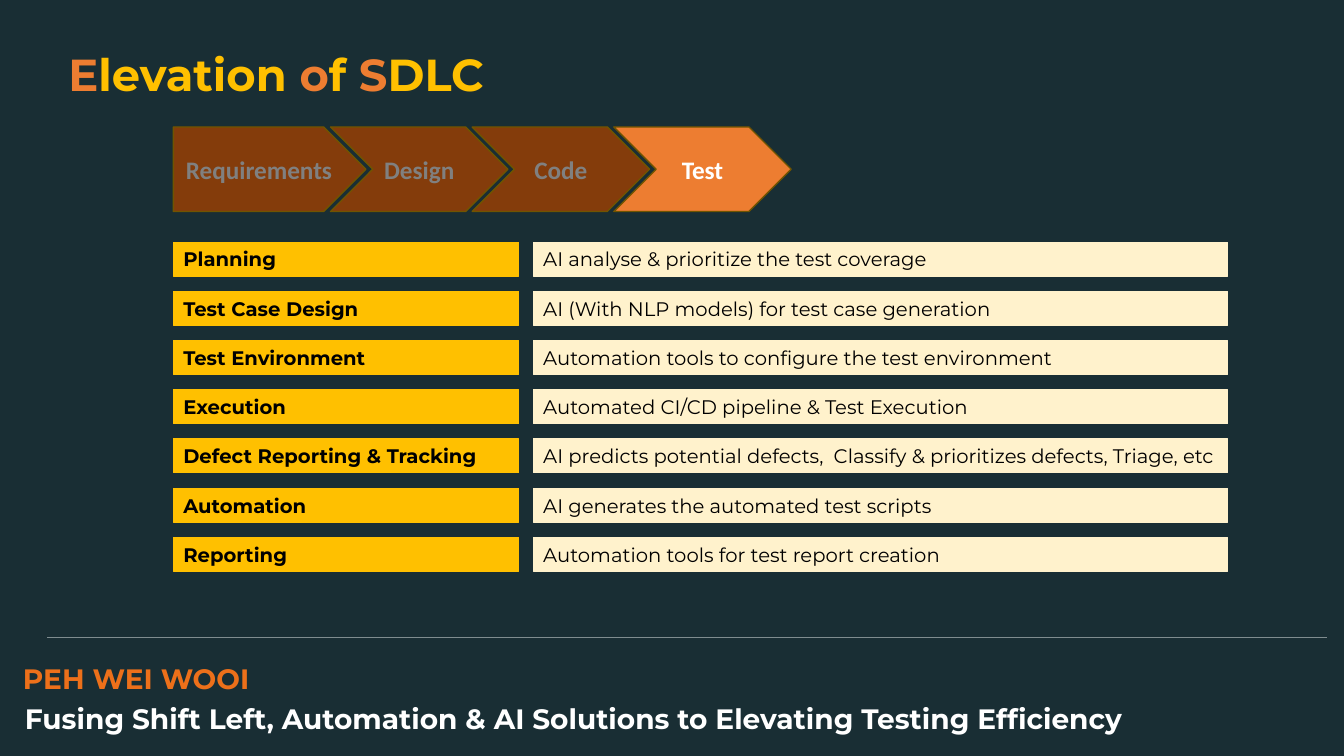
"""Builds a slide on how AI lifts the test stage of the SDLC."""
from pptx import Presentation
from pptx.dml.color import RGBColor
from pptx.enum.shapes import MSO_CONNECTOR, MSO_SHAPE
from pptx.enum.text import MSO_ANCHOR, PP_ALIGN
from pptx.oxml.ns import qn
from pptx.util import Cm, Pt
from lxml.etree import SubElement

COLOURS = {
    "background": "192E34",
    "rule": "7F8C8F",
    "name": "ED701A",
    "accent": "ED7D31",
    "gold": "FFC000",
    "cream": "FFF2CC",
    "muted": "843C0B",
    "outline": "705400",
    "grey": "808080",
    "white": "FFFFFF",
    "black": "000000",
}

TITLE_SPANS = [
    ("E", "accent"), ("levation", "gold"), (" o", "accent"),
    ("f", "gold"), (" S", "accent"), ("DLC", "gold"),
]

LATER_STAGES = [
    ("Design", "muted", "grey"),
    ("Code", "muted", "grey"),
    ("Test", "accent", "white"),
]

ACTIVITIES = [
    ("Planning", "AI analyse & prioritize the test coverage"),
    ("Test Case Design", "AI (With NLP models) for test case generation"),
    ("Test Environment", "Automation tools to configure the test environment"),
    ("Execution", "Automated CI/CD pipeline & Test Execution"),
    ("Defect Reporting & Tracking",
     "AI predicts potential defects,  Classify & prioritizes defects, Triage, etc"),
    ("Automation", "AI generates the automated test scripts"),
    ("Reporting", "Automation tools for test report creation"),
]


def colour(name):
    """Return the named colour."""
    return RGBColor.from_string(COLOURS[name])


def format_span(span, size, ink, bold=True, font="Montserrat"):
    """Set the font of one run."""
    span.font.name = font
    span.font.size = Pt(size)
    span.font.bold = bold
    span.font.color.rgb = colour(ink)


def add_title(page):
    """Place the title and colour its letters."""
    title = page.shapes.title
    title.left, title.top, title.width, title.height = Cm(1.47), Cm(1.04), Cm(31.67), Cm(1.63)
    title.text_frame.vertical_anchor = MSO_ANCHOR.MIDDLE
    para = title.text_frame.paragraphs[0]
    para.alignment = PP_ALIGN.LEFT
    para.line_spacing = 1.0
    for text, ink in TITLE_SPANS:
        span = para.add_run()
        span.text = text
        format_span(span, 32, ink)


def add_block(page, kind, left, top, width, height, fill, line, line_width):
    """Add a filled and outlined preset shape."""
    block = page.shapes.add_shape(kind, Cm(left), Cm(top), Cm(width), Cm(height))
    block.shadow.inherit = False
    block.fill.solid()
    block.fill.fore_color.rgb = colour(fill)
    block.line.color.rgb = colour(line)
    block.line.width = Pt(line_width)
    return block


def add_stage(page, kind, left, width, text, fill, ink):
    """Add one arrow of the process."""
    stage = add_block(page, kind, left, 3.2, width, 2.13, fill, "outline", 1)
    frame = stage.text_frame
    frame.text = text
    frame.word_wrap = True
    frame.margin_left = frame.margin_right = Cm(0)
    frame.vertical_anchor = MSO_ANCHOR.MIDDLE
    para = frame.paragraphs[0]
    para.alignment = PP_ALIGN.CENTER
    format_span(para.runs[0], 18, ink, font="Calibri")


def add_bar(page, left, top, width, text, fill, bold):
    """Add one bar of the activity list."""
    bar = add_block(page, MSO_SHAPE.RECTANGLE, left, top, width, 0.86, fill, fill, 0.75)
    frame = bar.text_frame
    frame.text = text
    frame.word_wrap = True
    frame.vertical_anchor = MSO_ANCHOR.MIDDLE
    para = frame.paragraphs[0]
    para.alignment = PP_ALIGN.LEFT
    format_span(para.runs[0], 14, "black", bold)


def add_footer_text(page, left, top, width, height, text, ink):
    """Add one line of the footer."""
    box = page.shapes.add_textbox(Cm(left), Cm(top), Cm(width), Cm(height))
    box.text_frame.text = text
    box.text_frame.word_wrap = True
    para = box.text_frame.paragraphs[0]
    para.line_spacing = 0.9
    format_span(para.runs[0], 20, ink)


def add_rule(page):
    """Add the thin line above the footer."""
    rule = page.shapes.add_connector(
        MSO_CONNECTOR.STRAIGHT, Cm(1.19), Cm(16.05), Cm(33.43), Cm(16.05))
    rule.line.color.rgb = colour("rule")
    rule.line.width = Pt(0.5)
    SubElement(rule._element.spPr, qn("a:effectLst"))


def main():
    """Build and save the deck."""
    deck = Presentation()
    deck.slide_width, deck.slide_height = Cm(33.87), Cm(19.05)
    page = deck.slides.add_slide(deck.slide_layouts[5])
    page.background.fill.solid()
    page.background.fill.fore_color.rgb = colour("background")

    add_title(page)
    add_stage(page, MSO_SHAPE.PENTAGON, 4.37, 4.85, "Requirements", "muted", "grey")
    for index, (text, fill, ink) in enumerate(LATER_STAGES):
        add_stage(page, MSO_SHAPE.CHEVRON, 8.33 + index * 3.57, 4.47, text, fill, ink)

    for index, (activity, support) in enumerate(ACTIVITIES):
        top = 6.1 + index * 1.24
        add_bar(page, 4.37, top, 8.71, activity, "gold", True)
        add_bar(page, 13.44, top, 17.5, support, "cream", False)

    add_rule(page)
    add_footer_text(page, 0.33, 16.64, 12.1, 0.9, "PEH WEI WOOI", "name")
    add_footer_text(
        page, 0.38, 17.65, 28.8, 0.62,
        "Fusing Shift Left, Automation & AI Solutions to Elevating Testing Efficiency", "white")
    deck.save("out.pptx")


if __name__ == "__main__":
    main()
